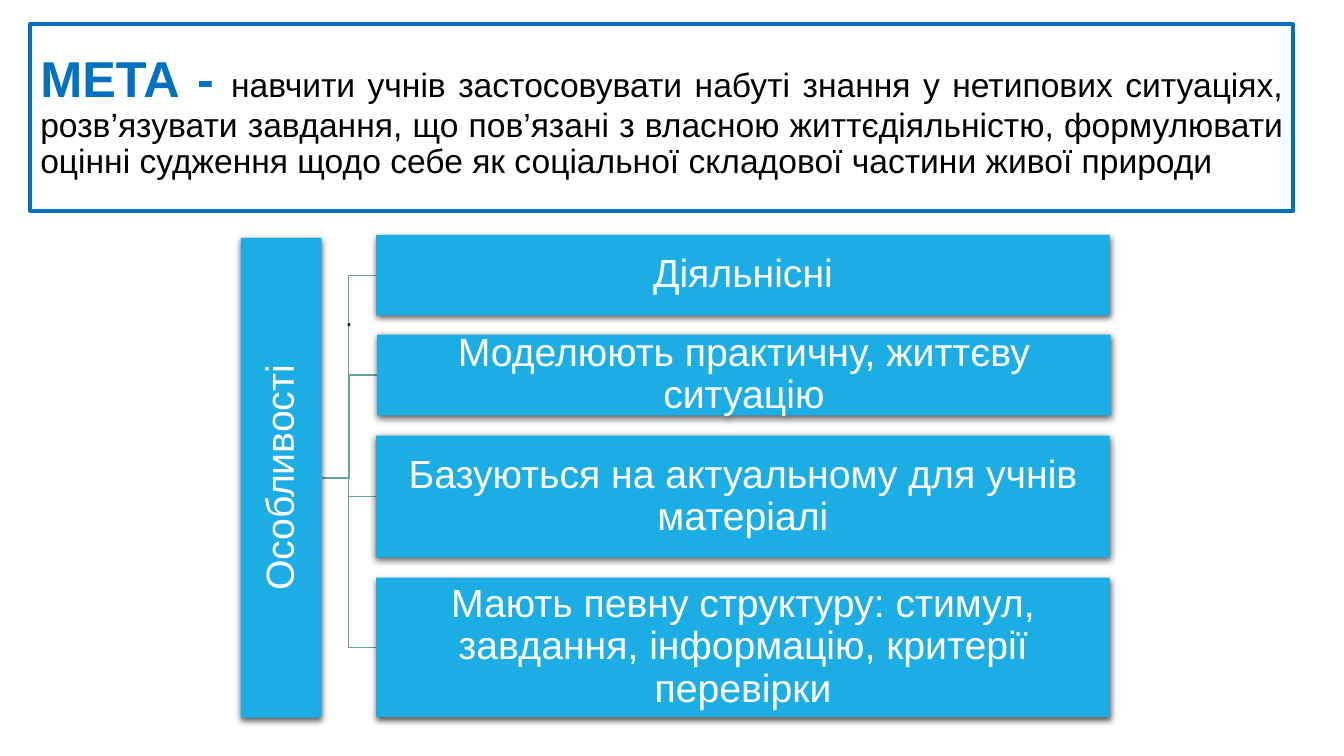
from lxml import etree
from pptx import Presentation
from pptx.dml.color import RGBColor
from pptx.enum.shapes import MSO_SHAPE
from pptx.enum.text import MSO_ANCHOR, MSO_AUTO_SIZE, PP_ALIGN
from pptx.oxml.ns import qn
from pptx.util import Pt

RECTANGLE = MSO_SHAPE.RECTANGLE
MIDDLE = MSO_ANCHOR.MIDDLE
CENTER, JUSTIFY = PP_ALIGN.CENTER, PP_ALIGN.JUSTIFY
NO_AUTOFIT, GROW = MSO_AUTO_SIZE.NONE, MSO_AUTO_SIZE.SHAPE_TO_FIT_TEXT
TITLE_ONLY = 5

FONT = "Arial"
COLORS = {"frame": "0070C0", "box": "1CADE4", "branch": "62A39F",
          "white": "FFFFFF", "black": "000000"}

GOAL = ("навчити учнів застосовувати набуті знання у нетипових ситуаціях, "
        "розв’язувати завдання, що пов’язані з власною життєдіяльністю, "
        "формулювати оцінні судження щодо себе як соціальної складової "
        "частини живої природи")
# Text, left shift, top and height, relative to the diagram
FEATURES = [
    ("Діяльнісні", 0, 0, 57.6),
    ("Моделюють практичну, життєву ситуацію", 0.7, 71.3, 57.6),
    ("Базуються на актуальному для учнів матеріалі", 0, 143.3, 87.1),
    ("Мають певну структуру: стимул, завдання, інформацію, критерії перевірки",
     0, 244.8, 99.4),
]


def color(name):
    return RGBColor.from_string(COLORS[name])


def add_run(paragraph, text, size, color_name, bold=False):
    run = paragraph.add_run()
    run.text = text
    run.font.name = FONT
    run.font.size = Pt(size)
    run.font.bold = bold
    run.font.color.rgb = color(color_name)


def add_shadow(shape):
    shape.shadow.inherit = False
    effects = shape._element.spPr.find(qn("a:effectLst"))
    shadow = etree.SubElement(effects, qn("a:outerShdw"), blurRad=str(Pt(4.5)),
                              dist=str(Pt(1.5)), dir="5400000", rotWithShape="0")
    shade = etree.SubElement(shadow, qn("a:srgbClr"), val=COLORS["black"])
    etree.SubElement(shade, qn("a:alpha"), val="63000")


def add_goal(slide, left, top, width, height):
    title = slide.shapes.title
    title.left, title.top = Pt(left), Pt(top)
    title.width, title.height = Pt(width), Pt(height)
    title.line.color.rgb = color("frame")
    title.line.width = Pt(3)
    frame = title.text_frame
    frame.word_wrap = True
    frame.auto_size = NO_AUTOFIT
    frame.vertical_anchor = MIDDLE
    paragraph = frame.paragraphs[0]
    paragraph.alignment = JUSTIFY
    paragraph.line_spacing = 0.9
    add_run(paragraph, "МЕТА - ", 36, "frame", bold=True)
    add_run(paragraph, GOAL, 24, "black")


def add_box(slide, text, left, top, width, height, rotation=0):
    box = slide.shapes.add_shape(RECTANGLE, Pt(left), Pt(top), Pt(width), Pt(height))
    box.rotation = rotation
    box.fill.solid()
    box.fill.fore_color.rgb = color("box")
    box.line.fill.background()
    add_shadow(box)
    frame = box.text_frame
    frame.word_wrap = True
    frame.vertical_anchor = MIDDLE
    frame.margin_left = frame.margin_right = Pt(1.4)
    frame.margin_top = frame.margin_bottom = Pt(1.4)
    paragraph = frame.paragraphs[0]
    paragraph.alignment = CENTER
    paragraph.line_spacing = 0.9
    add_run(paragraph, text, 28, "white")


def add_branch(slide, start_x, start_y, end_x, end_y):
    middle_x = (start_x + end_x) / 2
    builder = slide.shapes.build_freeform(Pt(start_x), Pt(start_y))
    builder.add_line_segments([(Pt(middle_x), Pt(start_y)), (Pt(middle_x), Pt(end_y)),
                               (Pt(end_x), Pt(end_y))], close=False)
    branch = builder.convert_to_shape()
    branch.fill.background()
    branch.line.color.rgb = color("branch")
    branch.line.width = Pt(1)
    branch.shadow.inherit = False


def add_diagram(slide, left, top, width, height):
    root_width, gap = 57.6, 38.9
    root_x, root_y = left + root_width / 2, top + 173.5
    feature_left = left + root_width + gap
    feature_width = width - root_width - gap

    # Branches behind the boxes
    for _, shift, offset, feature_height in FEATURES:
        add_branch(slide, left + root_width, root_y,
                   feature_left + shift, top + offset + feature_height / 2)

    # Root turned to read upwards
    add_box(slide, "Особливості", root_x - height / 2, root_y - root_width / 2,
            height, root_width, rotation=270)

    for text, shift, offset, feature_height in FEATURES:
        add_box(slide, text, feature_left + shift, top + offset,
                feature_width, feature_height)


def add_note(slide, left, top, width, height):
    note = slide.shapes.add_textbox(Pt(left), Pt(top), Pt(width), Pt(height))
    frame = note.text_frame
    frame.word_wrap = True
    frame.auto_size = GROW
    paragraph = frame.paragraphs[0]
    paragraph.alignment = JUSTIFY
    add_run(paragraph, ".", 18, "black")


def main():
    presentation = Presentation()
    presentation.slide_width, presentation.slide_height = Pt(960), Pt(540)
    slide = presentation.slides.add_slide(presentation.slide_layouts[TITLE_ONLY])
    add_goal(slide, 21.6, 17.3, 902.2, 133.2)
    add_diagram(slide, 172.1, 167.8, 620.6, 342.7)
    add_note(slide, 239.8, 211.7, 480.2, 28.8)
    presentation.save("out.pptx")


if __name__ == "__main__":
    main()
